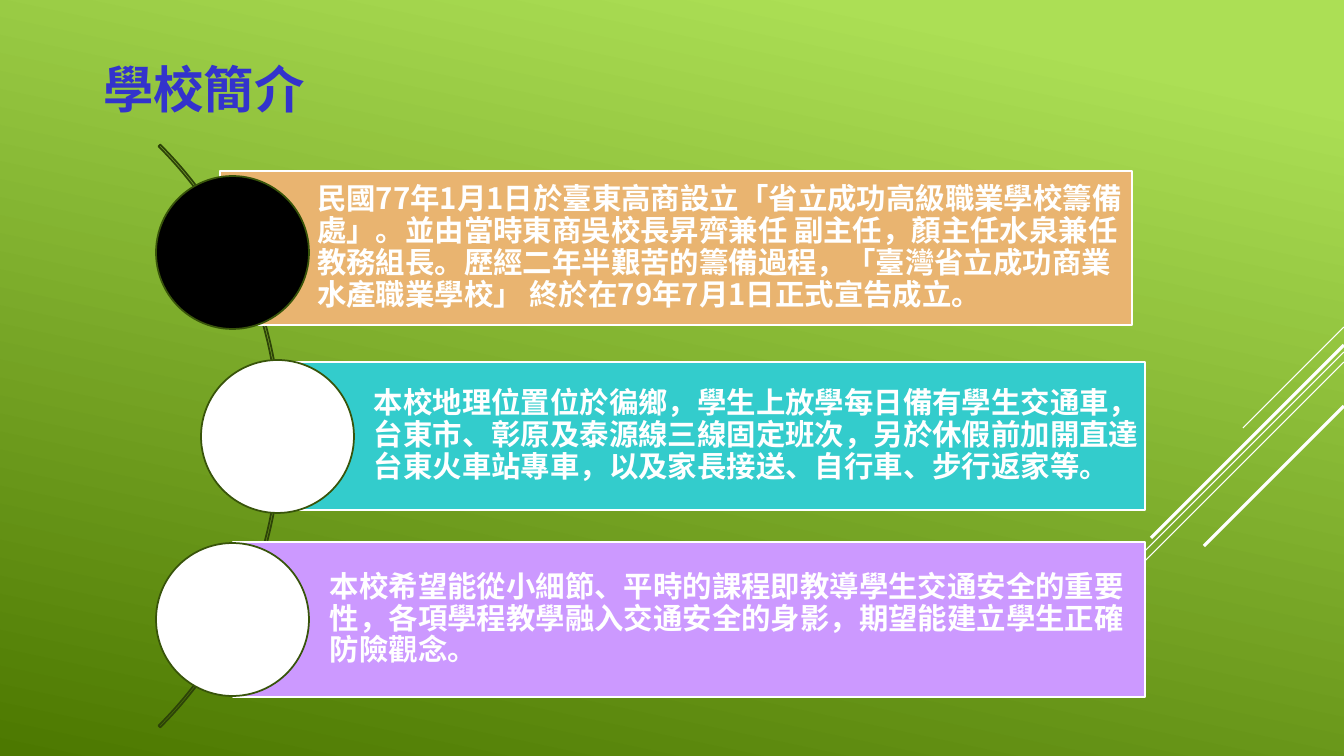
from pptx import Presentation
from pptx.dml.color import RGBColor
from pptx.enum.shapes import MSO_CONNECTOR, MSO_SHAPE
from pptx.enum.text import MSO_ANCHOR, PP_ALIGN
from pptx.oxml.ns import qn
from pptx.util import Pt
from lxml.etree import SubElement

PX = 914400 / 100.8  # EMU in one px
theme = {
    "font": "Noto Sans CJK SC",
    "head": 36, "body": 21,
    "title": "3333CC", "white": "FFFFFF",
    "arc": "2D4308", "ring": "38540A",
    "light": "ACDF55", "dark": "4C7800",
}


def draw(kind, box, fill, line):
    shape = deck.shapes.add_shape(kind, *[round(n * PX) for n in box])
    shape.shadow.inherit = False
    if fill:
        shape.fill.solid()
        shape.fill.fore_color.rgb = RGBColor.from_string(fill)
    else:
        shape.fill.background()
    shape.line.color.rgb = RGBColor.from_string(line)
    shape.line.width = Pt(1.25)
    return shape


def write(frame, text, size, color):
    frame.text = text
    frame.word_wrap = True
    frame.vertical_anchor = MSO_ANCHOR.MIDDLE
    para = frame.paragraphs[0]
    para.alignment = PP_ALIGN.LEFT
    para.line_spacing = 0.9
    font = para.runs[0].font
    font.size, font.bold, font.name = Pt(size), True, theme["font"]
    font.color.rgb = RGBColor.from_string(color)
    SubElement(font._element, qn("a:ea"), typeface=theme["font"])


show = Presentation()
show.slide_width, show.slide_height = round(1344 * PX), round(756 * PX)
deck = show.slides.add_slide(show.slide_layouts[5])

# Background
back = deck.background.fill
back.gradient()
back.gradient_angle = 258
for stop, place, tint in zip(back.gradient_stops, (0.1, 1), ("light", "dark")):
    stop.position = place
    stop.color.rgb = RGBColor.from_string(theme[tint])

# Diagonal lines from the right edge: start height, run, width
for top, run, width in [(327, 101, 0.75), (352, 329, 0.75), (362, 209, 0.75),
                        (345, 193, 2.25), (406, 140, 2.25)]:
    ends = [round(n * PX) for n in (1344, top, 1344 - run, top + run)]
    line = deck.shapes.add_connector(MSO_CONNECTOR.STRAIGHT, *ends)
    line.line.color.rgb = RGBColor.from_string(theme["white"])
    line.line.width = Pt(width)
    SubElement(line._element.spPr, qn("a:effectLst"))

# Title
title = deck.shapes.title
title.left, title.top, title.width, title.height = [
    round(n * PX) for n in (93, 19, 1159, 146)]
write(title.text_frame, "學校簡介", theme["head"], theme["title"])

# Arc behind the circles
arc = draw(MSO_SHAPE.BLOCK_ARC, (-543, 24, 824, 824), None, theme["arc"])
for i, turn in enumerate((189, 27, 0.003)):
    arc.adjustments[i] = turn

# Bars with their circles: bar box, bar fill, circle corner, circle fill, text
items = [
    ((220, 171, 912, 154), "E9B470", (156, 176), "000000",
     "民國77年1月1日於臺東高商設立「省立成功高級職業學校籌備處」。並由當時東商吳校長昇齊兼任 副主任，"
     "顏主任水泉兼任教務組長。歷經二年半艱苦的籌備過程，「臺灣省立成功商業水產職業學校」 "
     "終於在79年7月1日正式宣告成立。"),
    ((277, 362, 868, 148), "33CCCC", (201, 360), "FFFFFF",
     "本校地理位置位於徧鄉，學生上放學每日備有學生交通車，台東市、彰原及泰源線三線固定班次，"
     "另於休假前加開直達台東火車站專車，以及家長接送、自行車、步行返家等。"),
    ((233, 542, 912, 155), "CC99FF", (156, 543), "FFFFFF",
     "本校希望能從小細節、平時的課程即教導學生交通安全的重要性，各項學程教學融入交通安全的身影，"
     "期望能建立學生正確防險觀念。"),
]
for box, fill, spot, disc, text in items:
    bar = draw(MSO_SHAPE.RECTANGLE, box, fill, theme["white"])
    frame = bar.text_frame
    frame.margin_left = round(97 * PX)
    frame.margin_top = frame.margin_right = frame.margin_bottom = round(6 * PX)
    write(frame, text, theme["body"], theme["white"])
    draw(MSO_SHAPE.OVAL, (*spot, 153, 153), disc, theme["ring"])

show.save("out.pptx")
